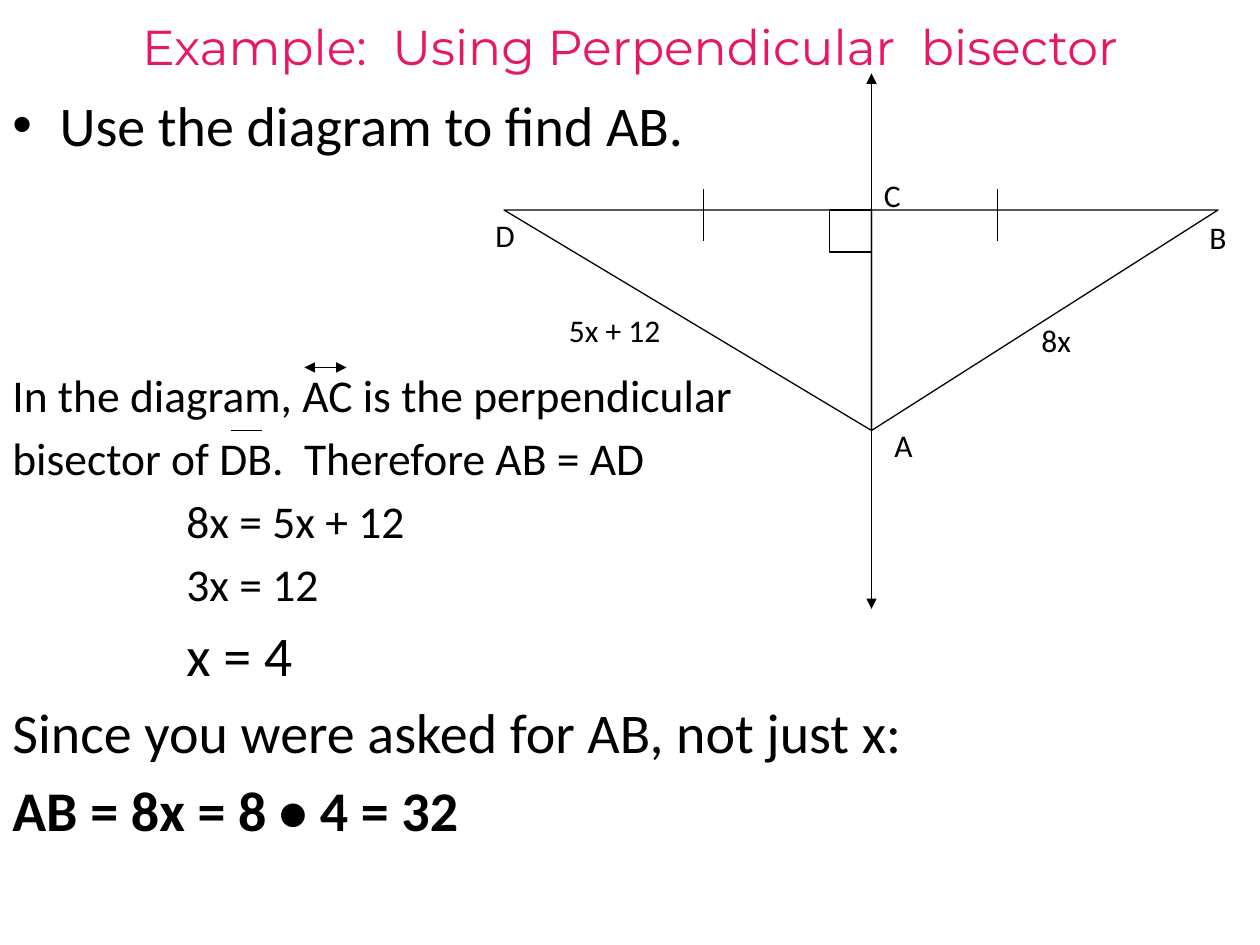
"""Build the slide on using a perpendicular bisector to find AB."""
from pptx import Presentation
from pptx.dml.color import RGBColor
from pptx.enum.shapes import MSO_CONNECTOR, MSO_SHAPE
from pptx.enum.text import MSO_ANCHOR, PP_ALIGN
from pptx.oxml.ns import qn
from pptx.util import Pt
from lxml.etree import SubElement

BLACK = RGBColor(0x00, 0x00, 0x00)
PINK = RGBColor(0xE8, 0x17, 0x66)
TOP, FOOT, MID = 120, 246, 498
LEFT, RIGHT = 288, 696
SQUARE = 24


def add_text(p, text, size, font="Calibri", color=BLACK, bold=False):
    r = p.add_run()
    r.text = text
    r.font.size = Pt(size)
    r.font.name = font
    r.font.bold = bold
    r.font.color.rgb = color


def add_line(x1, y1, x2, y2, arrows=False):
    c = s.shapes.add_connector(MSO_CONNECTOR.STRAIGHT, Pt(x1), Pt(y1), Pt(x2), Pt(y2))
    c.line.color.rgb = BLACK
    c.line.width = Pt(0.75)
    if arrows:
        ln = c.line._get_or_add_ln()
        for end in ("a:headEnd", "a:tailEnd"):
            SubElement(ln, qn(end), type="triangle")
    SubElement(c._element.spPr, qn("a:effectLst"))


prs = Presentation()
prs.slide_width, prs.slide_height = Pt(720), Pt(540)
s = prs.slides.add_slide(prs.slide_layouts[5])

title = s.shapes.title
title.left, title.top, title.width, title.height = Pt(18), Pt(6), Pt(684), Pt(36)
tf = title.text_frame
tf.word_wrap = False
tf.vertical_anchor = MSO_ANCHOR.TOP
p = tf.paragraphs[0]
p.alignment = PP_ALIGN.CENTER
add_text(p, "Example:  Using Perpendicular  bisector", 28, "Montserrat", PINK)

body = [
    ("Use the diagram to find AB.", 32, 27, 0),
    ("In the diagram, AC is the perpendicular", 26, 0, 120),
    ("bisector of DB.  Therefore AB = AD", 26, 0, 4.7),
    ("8x = 5x + 12", 26, 99.5, 4.7),
    ("3x = 12", 26, 99.5, 4.7),
    ("x = 4", 32, 99.5, 5.8),
    ("Since you were asked for AB, not just x:", 32, 0, 5.8),
    ("AB = 8x = 8 • 4 = 32", 32, 0, 5.8),
]
tf = s.shapes.add_textbox(Pt(0), Pt(48), Pt(720), Pt(492)).text_frame
tf.word_wrap = True
for i, (text, size, indent, before) in enumerate(body):
    p = tf.add_paragraph() if i else tf.paragraphs[0]
    p.space_before = Pt(before)
    pPr = p._p.get_or_add_pPr()
    pPr.set("marL", str(Pt(indent)))
    if i == 0:
        pPr.set("indent", str(-Pt(indent)))
        SubElement(pPr, qn("a:buFont"), typeface="Arial")
        SubElement(pPr, qn("a:buChar"), char="•")
    add_text(p, text, size, bold=i == len(body) - 1)

outlines = [
    (MSO_SHAPE.RIGHT_TRIANGLE, LEFT, MID - LEFT, FOOT - TOP, 180, False),
    (MSO_SHAPE.RIGHT_TRIANGLE, MID, RIGHT - MID, FOOT - TOP, 180, True),
    (MSO_SHAPE.RECTANGLE, MID - SQUARE, SQUARE, SQUARE, 0, False),
]
for kind, x, w, h, turn, flip in outlines:
    sp = s.shapes.add_shape(kind, Pt(x), Pt(TOP), Pt(w), Pt(h))
    sp.rotation = turn
    if flip:
        sp._element.spPr.find(qn("a:xfrm")).set("flipH", "1")
    sp.shadow.inherit = False
    sp.fill.background()
    sp.line.color.rgb = BLACK
    sp.line.width = Pt(0.75)

add_line(MID, 42, MID, 348, arrows=True)
for x in (402, 570):
    add_line(x, 108, x, 138)
add_line(174, 210, 198, 210, arrows=True)
add_line(132, FOOT, 150, FOOT)

labels = [
    ("A", 504, 240, 24),
    ("B", 684, 121, 24),
    ("C", 498, 97, 24),
    ("D", 276, 120, 24),
    ("8x", 588, 180, 36),
    ("5x + 12", 318, 174, 108),
]
for text, x, y, w in labels:
    tf = s.shapes.add_textbox(Pt(x), Pt(y), Pt(w), Pt(29)).text_frame
    tf.word_wrap = True
    add_text(tf.paragraphs[0], text, 18)

prs.save("out.pptx")
